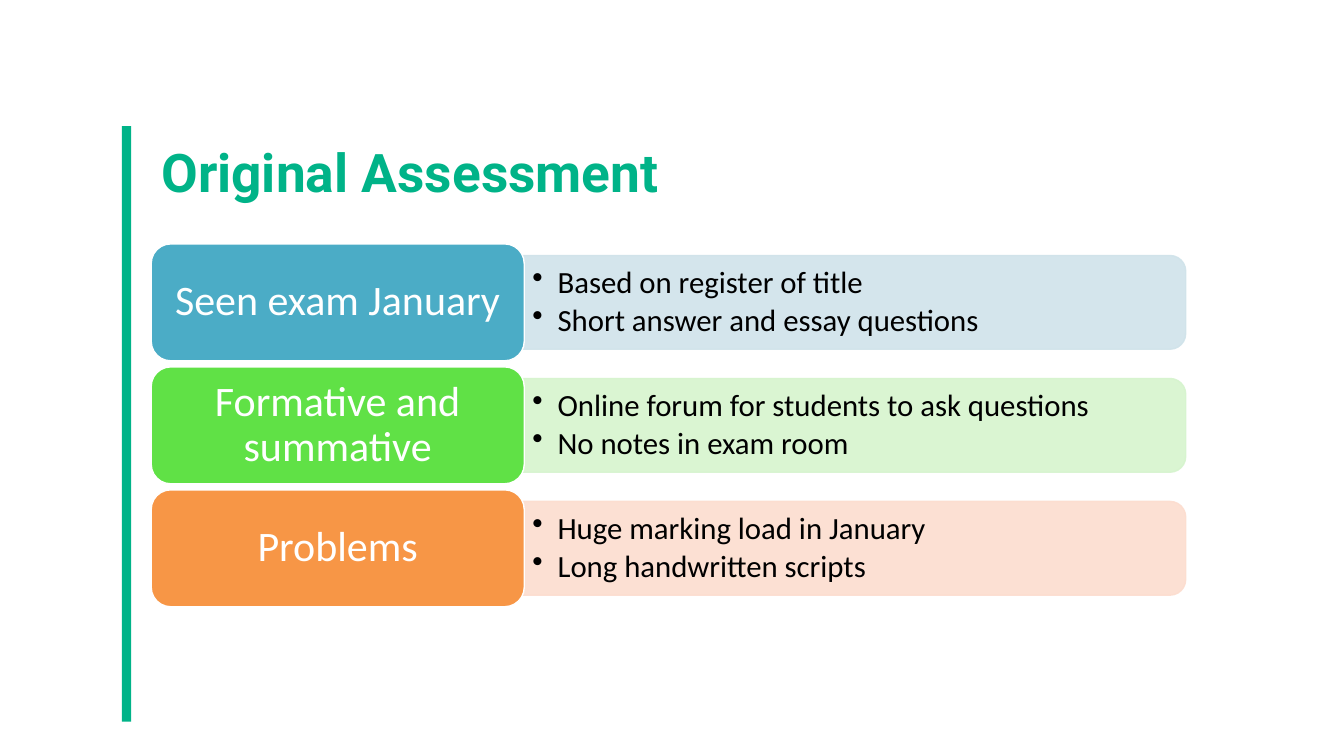
from dataclasses import dataclass

from lxml import etree
from pptx import Presentation, util as u
from pptx.dml.color import RGBColor
from pptx.enum import shapes, text
from pptx.oxml.ns import qn


@dataclass(frozen=True)
class Theme:
    accent: str = "00B388"
    white: str = "FFFFFF"
    black: str = "000000"
    head_font: str = "Roboto"
    body_font: str = "Calibri"
    title_size: int = 38
    label_size: int = 30
    bullet_size: int = 22
    line_spacing: float = 0.9
    bullet_gap: float = 3.3


THEME = Theme()

# Grid in inches: a label column, a detail column and evenly spaced rows
LABEL_LEFT, LABEL_W, LABEL_H = 1.5, 3.7, 1.16
DETAIL_LEFT, DETAIL_W, DETAIL_H = 5.19, 6.57, 0.93
TEXT_W, TEXT_H = 6.52, 0.84
FIRST_MIDDLE, ROW_PITCH = 3.0, 1.22

# Label, its bullets, label colour, detail colour
ROWS = [
    ("Seen exam January",
     ["Based on register of title", "Short answer and essay questions"],
     "4BACC6", "D0E3EA"),
    ("Formative and summative",
     ["Online forum for students to ask questions", "No notes in exam room"],
     "60E146", "D6F4CE"),
    ("Problems",
     ["Huge marking load in January", "Long handwritten scripts"],
     "F79646", "FCDDCF"),
]


def box(left, middle, width, height):
    """Lengths of a box that is centred vertically on middle."""
    return [u.Inches(v) for v in (left, middle - height / 2, width, height)]


def add_bullet(p, indent=0.25):
    pPr = p._p.get_or_add_pPr()
    pPr.set("marL", str(u.Inches(indent)))
    pPr.set("indent", str(-u.Inches(indent)))
    etree.SubElement(pPr, qn("a:buChar")).set("char", "•")


def write(sp, lines, size, color, font=THEME.body_font, bold=False,
          align=text.PP_ALIGN.LEFT, anchor=text.MSO_ANCHOR.MIDDLE,
          insets=(0.1, 0.05), bullets=False):
    tf = sp.text_frame
    tf.word_wrap = True
    tf.auto_size = text.MSO_AUTO_SIZE.NONE
    tf.vertical_anchor = anchor
    tf.margin_left = tf.margin_right = u.Inches(insets[0])
    tf.margin_top = tf.margin_bottom = u.Inches(insets[1])
    for i, line in enumerate(lines):
        p = tf.add_paragraph() if i else tf.paragraphs[0]
        p.alignment = align
        p.line_spacing = THEME.line_spacing
        if bullets:
            p.space_after = u.Pt(THEME.bullet_gap)
            add_bullet(p)
        r = p.add_run()
        r.text = line
        r.font.name, r.font.size, r.font.bold = font, u.Pt(size), bold
        r.font.color.rgb = RGBColor.from_string(color)


def add_block(slide, kind, place, fill, line=None, opacity=None):
    sp = slide.shapes.add_shape(kind, *place)
    sp.shadow.inherit = False
    sp.fill.solid()
    sp.fill.fore_color.rgb = RGBColor.from_string(fill)
    if line:
        sp.line.color.rgb = RGBColor.from_string(line)
        sp.line.width = u.Pt(1)
    else:
        sp.line.fill.background()
    if opacity:
        for color in sp._element.spPr.iter(qn("a:srgbClr")):
            etree.SubElement(color, qn("a:alpha")).set("val", str(opacity * 1000))
    return sp


def add_title(slide, title):
    sp = slide.shapes.title
    sp.left, sp.top, sp.width, sp.height = box(LABEL_LEFT, 1.665, 7.9, 0.81)
    write(sp, [title], THEME.title_size, THEME.accent, font=THEME.head_font,
          bold=True, anchor=text.MSO_ANCHOR.BOTTOM)


def add_row(slide, middle, label, bullets, label_fill, detail_fill):
    # Detail panel: turned a quarter so that its round corners face right
    center = DETAIL_LEFT + DETAIL_W / 2
    panel = add_block(slide, shapes.MSO_SHAPE.ROUND_2_SAME_RECTANGLE,
                      box(center - DETAIL_H / 2, middle, DETAIL_H, DETAIL_W),
                      detail_fill, line=detail_fill, opacity=90)
    panel.rotation = 90
    detail = slide.shapes.add_textbox(*box(DETAIL_LEFT, middle, TEXT_W, TEXT_H))
    write(detail, bullets, THEME.bullet_size, THEME.black,
          insets=(0.09, 0.05), bullets=True)
    # Label
    sp = add_block(slide, shapes.MSO_SHAPE.ROUNDED_RECTANGLE,
                   box(LABEL_LEFT, middle, LABEL_W, LABEL_H),
                   label_fill, line=THEME.white)
    write(sp, [label], THEME.label_size, THEME.white,
          align=text.PP_ALIGN.CENTER, insets=(0.12, 0.06))


def main():
    prs = Presentation()
    prs.slide_width, prs.slide_height = u.Inches(13.33), u.Inches(7.5)
    slide = prs.slides.add_slide(prs.slide_layouts[5])

    # Accent bar and title
    add_block(slide, shapes.MSO_SHAPE.RECTANGLE,
              box(1.21, 4.205, 0.09, 5.91), THEME.accent)
    add_title(slide, "Original Assessment")

    # Assessment rows
    for i, row in enumerate(ROWS):
        add_row(slide, FIRST_MIDDLE + i * ROW_PITCH, *row)

    prs.save("out.pptx")


if __name__ == "__main__":
    main()
